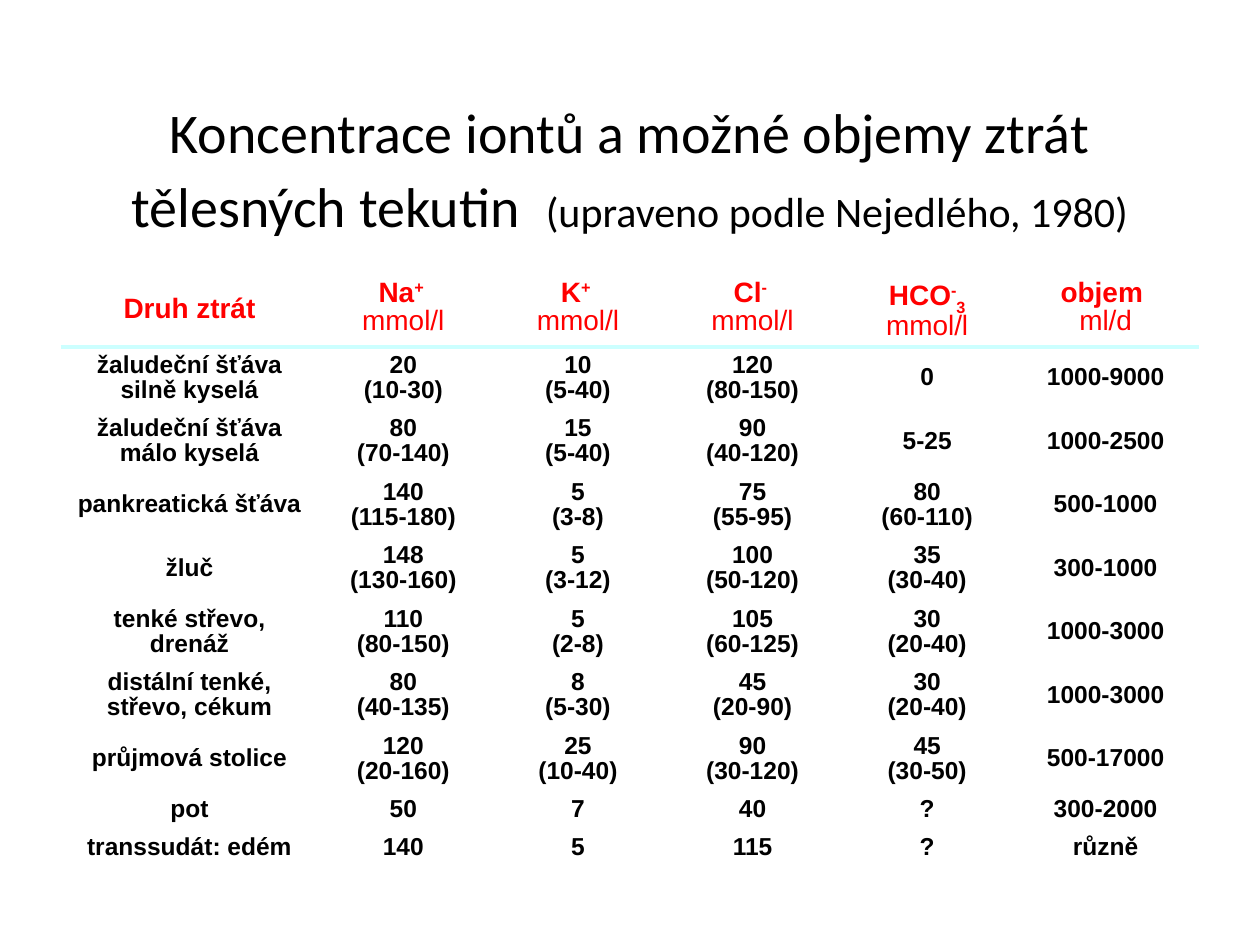
from lxml.etree import SubElement
from pptx import Presentation
from pptx.dml.color import RGBColor
from pptx.enum.text import MSO_ANCHOR as Anchor, PP_ALIGN as Align
from pptx.oxml.ns import qn
from pptx.util import Pt

BLACK = RGBColor(0x00, 0x00, 0x00)
WHITE = RGBColor(0xFF, 0xFF, 0xFF)
RED = RGBColor(0xFF, 0x00, 0x00)
PALE_CYAN = RGBColor(0xCC, 0xFF, 0xFF)

TITLE_FONT = {"name": "Calibri", "size": Pt(32)}
SOURCE_FONT = {"name": "Calibri", "size": Pt(24)}
HEADER_FONT = {"name": "Arial", "size": Pt(16), "bold": True}
UNIT_FONT = {**HEADER_FONT, "bold": False}
BODY_FONT = {"name": "Arial", "size": Pt(14), "bold": True}

ION_CELL = {"vertical_anchor": Anchor.TOP,
            "margin_top": Pt(3), "margin_bottom": Pt(0)}
MIDDLE_CELL = {"vertical_anchor": Anchor.MIDDLE,
               "margin_top": Pt(2.4), "margin_bottom": Pt(3)}

COLUMN_WIDTHS = [144.6, 99.8, 99.8, 99.8, 99.8, 104.2]
ROW_HEIGHTS = [41.4] + [36.3] * 7 + [21.8] * 2
HANGING = Pt(36.7)
RAISED, LOWERED = 30000, -30000

# Each header is a list of paragraphs, each a list of (text, font, baseline).
UNIT = ("mmol/l", UNIT_FONT, 0)
HEADERS = [
    [[("Druh ztrát", HEADER_FONT, 0)]],
    *[[[(ion, HEADER_FONT, 0), (charge, HEADER_FONT, RAISED)], [UNIT]]
      for ion, charge in (("Na", "+ "), ("K", "+ "), ("Cl", "- "))],
    [[("HCO", HEADER_FONT, 0), ("-", HEADER_FONT, RAISED),
      ("3 ", HEADER_FONT, LOWERED), UNIT]],
    [[("objem ", HEADER_FONT, 0)], [("ml/d", UNIT_FONT, 0)]],
]

WRAPPED_NAMES = ("tenké střevo, drenáž", "distální tenké, střevo, cékum")
LOSSES = [
    ("žaludeční šťáva\nsilně kyselá", "20\n(10-30)", "10\n(5-40)",
     "120\n(80-150)", "0", "1000-9000"),
    ("žaludeční šťáva\nmálo kyselá", "80\n(70-140)", "15\n(5-40)",
     "90\n(40-120)", "5-25", "1000-2500"),
    ("pankreatická šťáva", "140\n(115-180)", "5\n(3-8)",
     "75\n(55-95)", "80\n(60-110)", "500-1000"),
    ("žluč", "148\n(130-160)", "5\n(3-12)",
     "100\n(50-120)", "35\n(30-40)", "300-1000"),
    (WRAPPED_NAMES[0], "110\n(80-150)", "5\n(2-8)",
     "105\n(60-125)", "30\n(20-40)", "1000-3000"),
    (WRAPPED_NAMES[1], "80\n(40-135)", "8\n(5-30)",
     "45\n(20-90)", "30\n(20-40)", "1000-3000"),
    ("průjmová stolice", "120\n(20-160)", "25\n(10-40)",
     "90\n(30-120)", "45\n(30-50)", "500-17000"),
    ("pot", "50", "7", "40", "?", "300-2000"),
    ("transsudát: edém", "140", "5", "115", "?", "různě"),
]


def set_values(target, values):
    for name, value in values.items():
        setattr(target, name, value)


def add_span(para, text, font, color, baseline=0):
    span = para.add_run()
    span.text = text
    set_values(span.font, font)
    span.font.color.rgb = color
    if baseline:
        span.font._element.set("baseline", str(baseline))


def add_title(page):
    box = page.shapes.add_textbox(Pt(25.2), Pt(43.2), Pt(669.6), Pt(101.5))
    frame = box.text_frame
    frame.word_wrap = True
    frame.vertical_anchor = Anchor.MIDDLE
    para = frame.paragraphs[0]
    para.alignment = Align.CENTER
    para.line_spacing = 1.1
    add_span(para, "Koncentrace iontů a možné objemy ztrát tělesných tekutin  ",
             TITLE_FONT, BLACK)
    add_span(para, "(upraveno podle Nejedlého, 1980)", SOURCE_FONT, BLACK)


def fill_cell(cell, paragraphs, color, hanging=False):
    frame = cell.text_frame
    for index, spans in enumerate(paragraphs):
        para = frame.add_paragraph() if index else frame.paragraphs[0]
        para.alignment = Align.CENTER
        para.line_spacing = 0.9
        if hanging:
            properties = para._p.get_or_add_pPr()
            properties.set("marL", str(HANGING))
            properties.set("indent", str(-HANGING))
        for text, font, baseline in spans:
            add_span(para, text, font, color, baseline)


def set_borders(cell, row, column):
    """Thick outer frame, medium lines beside the names and below the header."""
    last_row, last_column = len(ROW_HEIGHTS) - 1, len(COLUMN_WIDTHS) - 1

    def vertical(edge):
        width = {0: 3, 1: 2.25, last_column + 1: 3}.get(edge, 0.75)
        return width, WHITE

    def horizontal(edge):
        if edge == 1:
            return 2.25, PALE_CYAN
        return (3 if edge in (0, last_row + 1) else 0.75), WHITE

    sides = {"a:lnL": vertical(column), "a:lnR": vertical(column + 1),
             "a:lnT": horizontal(row), "a:lnB": horizontal(row + 1)}
    properties = cell._tc.get_or_add_tcPr()
    for tag, (width, color) in sides.items():
        line = SubElement(properties, qn(tag), w=str(Pt(width)))
        solid = SubElement(line, qn("a:solidFill"))
        SubElement(solid, qn("a:srgbClr"), val=str(color))


def add_loss_table(page):
    table = page.shapes.add_table(
        len(ROW_HEIGHTS), len(COLUMN_WIDTHS), Pt(36), Pt(157),
        Pt(sum(COLUMN_WIDTHS)), Pt(sum(ROW_HEIGHTS))).table
    table.first_row = table.horz_banding = False
    for column, width in zip(table.columns, COLUMN_WIDTHS):
        column.width = Pt(width)
    for row, height in zip(table.rows, ROW_HEIGHTS):
        row.height = Pt(height)

    for column, header in enumerate(HEADERS):
        fill_cell(table.cell(0, column), header, RED)
    for row, loss in enumerate(LOSSES, start=1):
        for column, text in enumerate(loss):
            lines = [[(line, BODY_FONT, 0)] for line in text.split("\n")]
            fill_cell(table.cell(row, column), lines, BLACK,
                      hanging=text not in WRAPPED_NAMES)

    for row in range(len(ROW_HEIGHTS)):
        for column in range(len(COLUMN_WIDTHS)):
            cell = table.cell(row, column)
            is_ion = row == 0 and column > 0
            set_values(cell, ION_CELL if is_ion else MIDDLE_CELL)
            set_borders(cell, row, column)
            cell.fill.background()


def main():
    deck = Presentation()
    deck.slide_width, deck.slide_height = Pt(720), Pt(540)
    page = deck.slides.add_slide(deck.slide_layouts[6])
    add_title(page)
    add_loss_table(page)
    deck.save("out.pptx")


if __name__ == "__main__":
    main()
